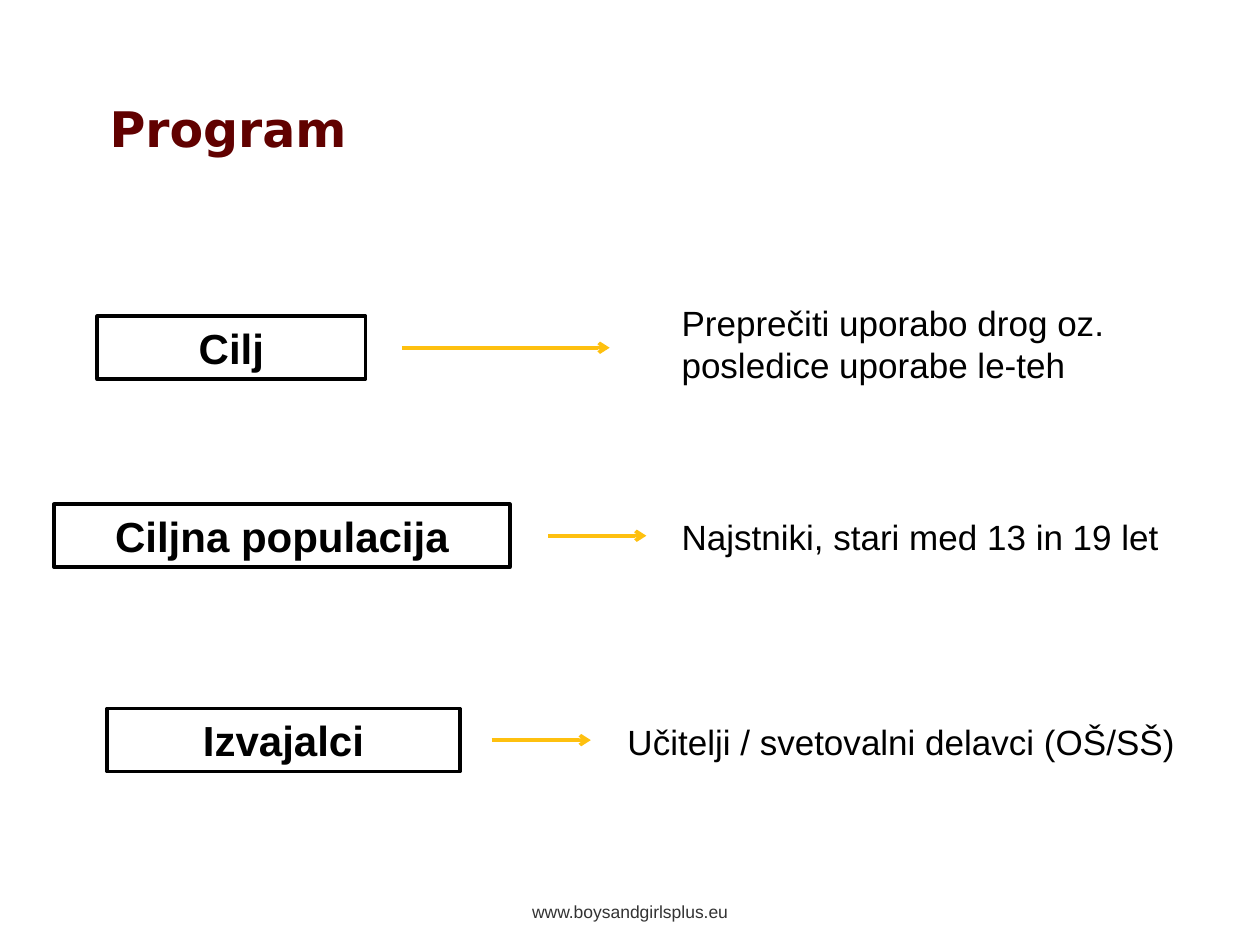
from dataclasses import dataclass

from lxml.etree import SubElement
from pptx import Presentation
from pptx.dml.color import RGBColor as Rgb
from pptx.enum.shapes import MSO_CONNECTOR as Link, MSO_SHAPE as Form
from pptx.enum.text import MSO_ANCHOR as Anchor, PP_ALIGN as Align
from pptx.oxml.ns import qn
from pptx.util import Cm, Pt


@dataclass(frozen=True)
class Theme:
    ink: str = "000000"
    paper: str = "FFFFFF"
    wine: str = "610100"
    gold: str = "FEC00F"
    grey: str = "333333"
    body: str = "Arial"
    head: str = "DejaVu Sans"
    title: int = 28
    label: int = 24
    text: int = 20
    foot: int = 10
    line: int = 2


class Page:
    def __init__(self, slide, theme):
        self.slide = slide
        self.theme = theme

    def letter(self, shape, text, size, color, face=None, bold=False, align=Align.LEFT, wrap=True):
        frame = shape.text_frame
        frame.word_wrap = wrap
        frame.vertical_anchor = Anchor.MIDDLE
        para = frame.paragraphs[0]
        para.text = text
        para.alignment = align
        font = para.font
        font.name = face or self.theme.body
        font.size = Pt(size)
        font.bold = bold
        font.color.rgb = Rgb.from_string(color)

    def note(self, text, left, mid, width, height, size, color, **style):
        box = self.slide.shapes.add_textbox(Cm(left), Cm(mid - height / 2), Cm(width), Cm(height))
        self.letter(box, text, size, color, **style)

    def label(self, text, left, mid, width, height=1.27):
        t = self.theme
        box = self.slide.shapes.add_shape(
            Form.RECTANGLE, Cm(left), Cm(mid - height / 2), Cm(width), Cm(height))
        box.shadow.inherit = False
        box.fill.solid()
        box.fill.fore_color.rgb = Rgb.from_string(t.paper)
        box.line.color.rgb = Rgb.from_string(t.ink)
        box.line.width = Pt(t.line)
        self.letter(box, text, t.label, t.ink, bold=True, align=Align.CENTER)

    def arrow(self, start, end, mid):
        t = self.theme
        link = self.slide.shapes.add_connector(Link.STRAIGHT, Cm(start), Cm(mid), Cm(end), Cm(mid))
        link.line.color.rgb = Rgb.from_string(t.gold)
        link.line.width = Pt(t.line)
        props = link.element.spPr
        SubElement(props.find(qn("a:ln")), qn("a:tailEnd"), type="arrow")
        SubElement(props, qn("a:effectLst"))


def main():
    deck = Presentation()
    deck.slide_width, deck.slide_height = Cm(25.4), Cm(19.05)
    theme = Theme()
    page = Page(deck.slides.add_slide(deck.slide_layouts[6]), theme)

    page.note("www.boysandgirlsplus.eu", 10.44, 18.38, 4.52, 0.69, theme.foot, theme.grey,
              align=Align.CENTER, wrap=False)
    page.note("Program", 1.96, 2.58, 21.89, 1.19, theme.title, theme.wine,
              face=theme.head, bold=True)

    rows = [
        ("Cilj", 7.01, (1.96, 5.41), (8.1, 12.29),
         "Preprečiti uporabo drog oz. posledice uporabe le-teh", (13.49, 6.92, 10.01, 1.96)),
        ("Ciljna populacija", 10.8, (1.09, 9.19), (11.05, 13.03),
         "Najstniki, stari med 13 in 19 let", (13.49, 10.82, 10.59, 1.12)),
        ("Izvajalci", 14.92, (2.16, 7.11), (9.91, 11.91),
         "Učitelji / svetovalni delavci (OŠ/SŠ)", (12.4, 14.94, 12.24, 1.12)),
    ]
    for name, mid, (left, width), (start, end), text, place in rows:
        page.label(name, left, mid, width)
        page.arrow(start, end, mid)
        page.note(text, *place, theme.text, theme.ink)

    deck.save("out.pptx")


if __name__ == "__main__":
    main()
